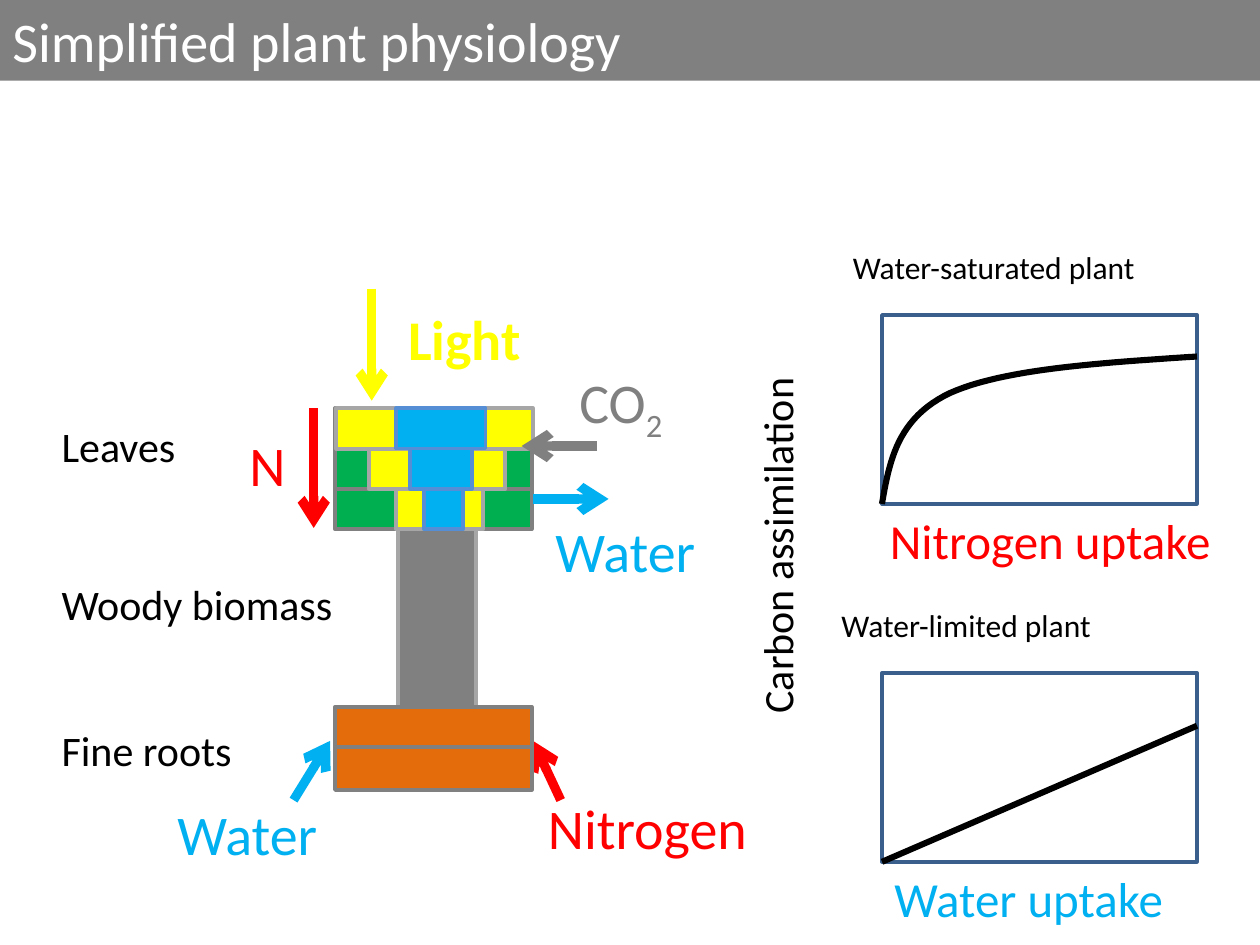
from lxml.etree import SubElement
from pptx import Presentation
from pptx.dml.color import RGBColor
from pptx.enum.shapes import MSO_CONNECTOR, MSO_SHAPE
from pptx.enum.text import MSO_ANCHOR, PP_ALIGN
from pptx.oxml import parse_xml
from pptx.oxml.ns import nsdecls, qn
from pptx.util import Inches, Pt

BLACK = RGBColor(0x00, 0x00, 0x00)
WHITE = RGBColor(0xFF, 0xFF, 0xFF)
GRAY = RGBColor(0x80, 0x80, 0x80)
SILVER = RGBColor(0xA6, 0xA6, 0xA6)
GREEN = RGBColor(0x00, 0xB0, 0x50)
YELLOW = RGBColor(0xFF, 0xFF, 0x00)
RED = RGBColor(0xFF, 0x00, 0x00)
WATER_BLUE = RGBColor(0x00, 0xB0, 0xF0)
EDGE_BLUE = RGBColor(0x55, 0x8E, 0xD5)
FRAME_BLUE = RGBColor(0x3A, 0x5F, 0x8C)
ORANGE = RGBColor(0xE4, 0x6C, 0x0A)


def add_block(slide, left, top, width, height, fill, edge=None, weight=2.25):
    block = slide.shapes.add_shape(
        MSO_SHAPE.RECTANGLE, Inches(left), Inches(top), Inches(width), Inches(height))
    block.shadow.inherit = False
    block.fill.solid()
    block.fill.fore_color.rgb = fill
    if edge is None:
        block.line.fill.background()
    else:
        block.line.color.rgb = edge
        block.line.width = Pt(weight)
    return block


def write(frame, text, size, color, align=PP_ALIGN.LEFT):
    frame.word_wrap = True
    paragraph = frame.paragraphs[0]
    paragraph.alignment = align
    paragraph.add_run().text = text
    paragraph.font.name = "Calibri"
    paragraph.font.size = Pt(size)
    paragraph.font.color.rgb = color
    return paragraph


def add_label(slide, text, left, top, width, height, size, color, align=PP_ALIGN.LEFT):
    label = slide.shapes.add_textbox(
        Inches(left), Inches(top), Inches(width), Inches(height))
    write(label.text_frame, text, size, color, align)
    return label


def add_stroke(slide, start, end, color, weight=5.25, arrow=True):
    stroke = slide.shapes.add_connector(
        MSO_CONNECTOR.STRAIGHT, *(Inches(value) for value in (*start, *end)))
    stroke.line.color.rgb = color
    stroke.line.width = Pt(weight)
    if arrow:
        SubElement(stroke.line._get_or_add_ln(), qn("a:tailEnd"), type="arrow")
    SubElement(stroke._element.spPr, qn("a:effectLst"))


def add_title(slide, left, top, width, height):
    banner = add_block(slide, left, top, width, height, GRAY)
    banner.text_frame.vertical_anchor = MSO_ANCHOR.MIDDLE
    write(banner.text_frame, "Simplified plant physiology", 32, WHITE)


def add_plant(slide, left, top, width):
    layer = 0.32
    add_block(slide, left + 0.5, top + 0.95, 0.62, 1.48, GRAY, SILVER, 2)
    for row in range(3):
        add_block(slide, left, top + row * layer, width, layer, GREEN, GRAY)

    add_stroke(slide, (left + 1.79, top + 3.11), (left + 1.57, top + 2.64), RED)
    add_stroke(slide, (left + 0.29, top - 0.95), (left + 0.29, top - 0.06), YELLOW)
    add_stroke(slide, (left + 1.57, top + 0.72), (left + 2.17, top + 0.72), WATER_BLUE)

    bands = [
        (YELLOW, SILVER, 2.25, [(0.79, 1.56), (0.81, 1.08), (0.83, 0.69)]),
        (WATER_BLUE, EDGE_BLUE, 2, [(0.84, 0.71), (0.84, 0.49), (0.86, 0.31)]),
    ]
    for fill, edge, weight, spans in bands:
        for row, (center, span) in enumerate(spans):
            add_block(slide, left + center - span / 2, top + row * layer,
                      span, layer, fill, edge, weight)

    add_stroke(slide, (left - 0.17, top), (left - 0.17, top + 0.95), RED)
    for depth in (2.37, 2.69):
        add_block(slide, left, top + depth, width, 0.34, ORANGE, GRAY)
    add_stroke(slide, (left - 0.33, top + 3.11), (left - 0.04, top + 2.64), WATER_BLUE)
    add_stroke(slide, (left + 2.08, top + 0.3), (left + 1.48, top + 0.3), GRAY)


def add_flow_labels(slide, left, top):
    flows = [
        ("Water", 1.65, 0.81, 1.41, WATER_BLUE),
        ("Nitrogen", 1.59, 3.01, 2.31, RED),
        ("Water", -1.35, 3.06, 1.84, WATER_BLUE),
        ("N", -0.78, 0.13, 1.51, RED),
    ]
    for text, dx, dy, width, color in flows:
        add_label(slide, text, left + dx, top + dy, width, 0.64, 32, color)

    gas = add_label(slide, "CO", left + 1.84, top - 0.37, 1.69, 0.75, 32, GRAY)
    subscript = gas.text_frame.paragraphs[0].add_run()
    subscript.text = "2"
    subscript.font._element.set("baseline", "-25000")

    light = add_label(slide, "Light", left + 0.48, top - 0.87, 1.61, 0.64, 32, YELLOW)
    light_paragraph = light.text_frame.paragraphs[0]
    light_paragraph.font.bold = True
    outline = parse_xml(
        f'<a:ln {nsdecls("a")} w="9525"><a:solidFill>'
        f'<a:srgbClr val="{SILVER}"/></a:solidFill></a:ln>')
    light_paragraph.runs[0].font._element.insert(0, outline)


def add_part_labels(slide, left, top):
    for text, dy in (("Leaves", 0), ("Woody biomass", 1.25), ("Fine roots", 2.41)):
        add_label(slide, text, left, top + dy, 3.42, 0.5, 24, BLACK)


def bezier(p0, p1, p2, p3, steps=24):
    for step in range(1, steps + 1):
        t = step / steps
        weights = ((1 - t) ** 3, 3 * t * (1 - t) ** 2, 3 * t ** 2 * (1 - t), t ** 3)
        yield tuple(sum(w * p[axis] for w, p in zip(weights, (p0, p1, p2, p3)))
                    for axis in (0, 1))


def draw_saturating(slide, left, top, width, height):
    start, knee = (0, height), (0.54, 0.62)
    points = [*bezier(start, (0.06, 1.16), (0.12, 0.82), knee),
              *bezier(knee, (0.96, 0.43), (1.73, 0.38), (width, 0.33))]
    builder = slide.shapes.build_freeform(Inches(left), Inches(top + height))
    builder.add_line_segments(
        [(Inches(left + x), Inches(top + y)) for x, y in points], close=False)
    curve = builder.convert_to_shape()
    curve.shadow.inherit = False
    curve.fill.background()
    curve.line.color.rgb = BLACK
    curve.line.width = Pt(3.5)


def draw_linear(slide, left, top, width, height):
    add_stroke(slide, (left, top + height), (left + width, top + 0.42),
               BLACK, 3.5, arrow=False)


def add_graph(slide, left, top, width, height, heading, heading_shift,
              uptake, color, uptake_shift, uptake_width, align, draw_response):
    add_block(slide, left, top, width, height, WHITE, FRAME_BLUE, 2)
    add_label(slide, uptake, left + uptake_shift, top + height, uptake_width, 0.57,
              28, color, align)
    draw_response(slide, left, top, width, height)
    add_label(slide, heading, left + heading_shift, top - 0.58, 2.58, 0.4, 18, BLACK)


def main():
    presentation = Presentation()
    presentation.slide_width = Inches(10)
    presentation.slide_height = Inches(7.5)
    slide = presentation.slides.add_slide(presentation.slide_layouts[6])

    add_plant(slide, 2.66, 3.24, 1.56)
    add_flow_labels(slide, 2.66, 3.24)
    add_part_labels(slide, 0.39, 3.29)
    add_title(slide, 0, 0, 10, 0.64)
    add_graph(slide, 7, 2.5, 2.5, 1.5, "Water-saturated plant", -0.33,
              "Nitrogen uptake", RED, -0.08, 2.83, PP_ALIGN.CENTER, draw_saturating)
    add_graph(slide, 7, 5.34, 2.5, 1.5, "Water-limited plant", -0.42,
              "Water uptake", WATER_BLUE, 0, 2.5, PP_ALIGN.LEFT, draw_linear)
    axis = add_label(slide, "Carbon assimilation", 4.5, 4.08, 3.33, 0.5, 24,
                     BLACK, PP_ALIGN.CENTER)
    axis.rotation = 270

    presentation.save("out.pptx")


if __name__ == "__main__":
    main()
